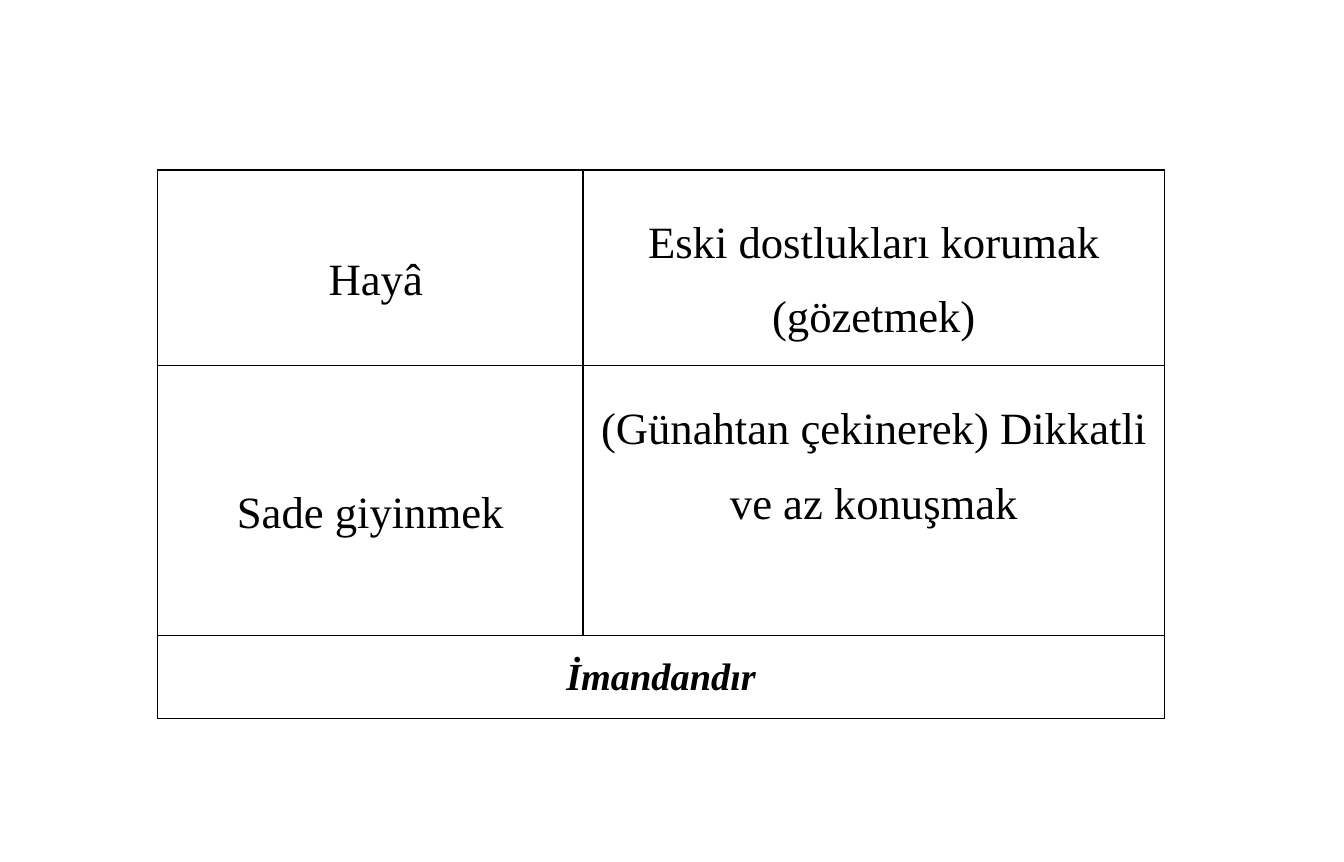
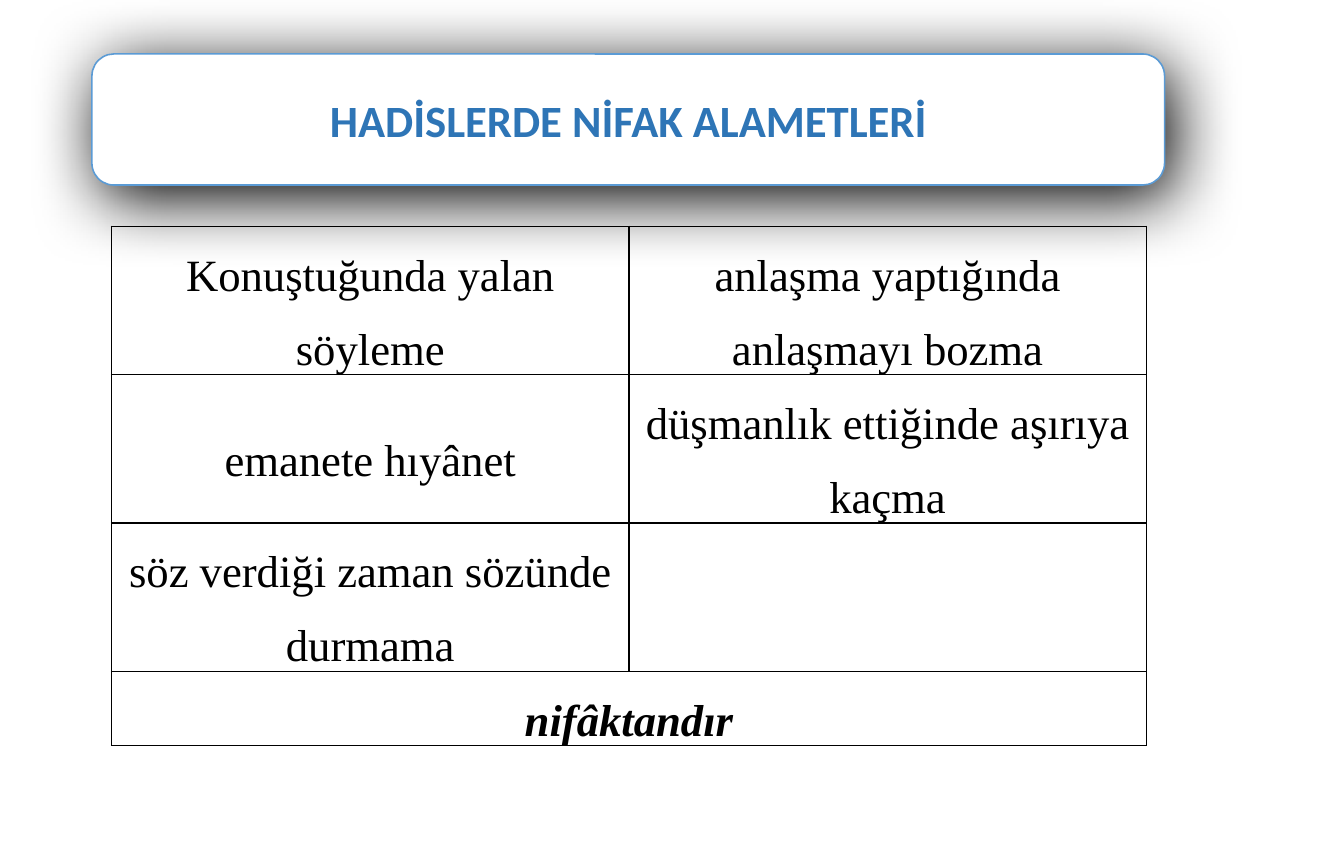
from lxml.etree import SubElement
from pptx import Presentation
from pptx.dml.color import RGBColor
from pptx.enum.shapes import MSO_SHAPE
from pptx.enum.text import MSO_ANCHOR, PP_ALIGN
from pptx.oxml.ns import qn
from pptx.util import Inches, Pt


def rgb(value):
    return RGBColor.from_string(value)


def apply(target, values):
    for name, value in values.items():
        setattr(target, name, value)


def add_color(parent, value):
    fill = SubElement(parent, qn("a:solidFill"))
    SubElement(fill, qn("a:srgbClr"), val=value)


class Deck:
    INK, PAPER, OUTLINE, TITLE = "000000", "FFFFFF", "5B9BD5", "2E75B6"
    BODY = dict(name="Times New Roman", size=Pt(28))
    HEADING = dict(name="Calibri", size=Pt(28), bold=True)
    PARAGRAPH = dict(alignment=PP_ALIGN.CENTER, line_spacing=1.5, space_after=Pt(6))
    CELL = dict(margin_left=Inches(0.07), margin_right=Inches(0.07),
                margin_top=0, margin_bottom=0)

    def __init__(self):
        self.prs = Presentation()
        self.prs.slide_width = Inches(11.69)
        self.prs.slide_height = Inches(7.5)

    def slide(self):
        self.s = self.prs.slides.add_slide(self.prs.slide_layouts[6])

    def run(self, p, text, font, color):
        r = p.add_run()
        r.text = text
        apply(r.font, font)
        r.font.color.rgb = rgb(color)

    def shadow(self, sp):
        sp.shadow.inherit = False
        effects = sp._element.spPr.find(qn("a:effectLst"))
        outer = SubElement(effects, qn("a:outerShdw"), blurRad=str(Pt(43)),
                           dist=str(Pt(9)), dir=str(60 * 60000),
                           algn="ctr", rotWithShape="0")
        color = SubElement(outer, qn("a:srgbClr"), val=self.INK)
        SubElement(color, qn("a:alpha"), val="99000")

    def banner(self, text, x, y, w, h):
        sp = self.s.shapes.add_shape(MSO_SHAPE.ROUNDED_RECTANGLE,
                                     *map(Inches, (x, y, w, h)))
        sp.fill.solid()
        sp.fill.fore_color.rgb = rgb(self.PAPER)
        sp.line.color.rgb = rgb(self.OUTLINE)
        sp.line.width = Pt(1)
        self.shadow(sp)
        tf = sp.text_frame
        apply(tf, dict(word_wrap=True, vertical_anchor=MSO_ANCHOR.MIDDLE))
        p = tf.paragraphs[0]
        p.alignment = PP_ALIGN.CENTER
        self.run(p, text, self.HEADING, self.TITLE)

    def borders(self, cell):
        tcPr = cell._tc.get_or_add_tcPr()
        for side in ("lnL", "lnR", "lnT", "lnB"):
            add_color(SubElement(tcPr, qn(f"a:{side}"), w=str(Pt(1))), self.INK)
        cell.fill.background()

    def cell_text(self, cell, text, **extra):
        apply(cell, self.CELL)
        p = cell.text_frame.paragraphs[0]
        apply(p, self.PARAGRAPH)
        self.run(p, text, {**self.BODY, **extra}, self.INK)

    def table(self, x, y, cols, rows, texts, verdict, verdict_size):
        """Draw a grid of texts closed by one merged verdict row."""
        size = (x, y, sum(cols), sum(rows))
        table = self.s.shapes.add_table(len(rows), len(cols), *map(Inches, size)).table
        apply(table, dict(first_row=False, horz_banding=False))
        for col, width in zip(table.columns, cols):
            col.width = Inches(width)
        for row, height in zip(table.rows, rows):
            row.height = Inches(height)
        for cell in table.iter_cells():
            self.borders(cell)
        for i, line in enumerate(texts):
            for j, text in enumerate(line):
                if text:
                    cell = table.cell(i, j)
                    self.cell_text(cell, text)
                    cell.vertical_anchor = MSO_ANCHOR.MIDDLE
        last = len(rows) - 1
        table.cell(last, 0).merge(table.cell(last, len(cols) - 1))
        self.cell_text(table.cell(last, 0), verdict, size=Pt(verdict_size),
                       bold=True, italic=True)
        return table


def main():
    deck = Deck()

    # Signs of faith
    deck.slide()
    faith = deck.table(1.37, 1.48, (3.7, 5.06), (1.7, 2.35, 0.72), [
        (" Hayâ", "Eski dostlukları korumak (gözetmek)"),
        ("Sade giyinmek", "(Günahtan çekinerek) Dikkatli ve az konuşmak"),
    ], "İmandandır", 24)
    # This text sits above the middle of its cell
    faith.cell(1, 1).margin_bottom = Inches(0.8)

    # Signs of hypocrisy
    deck.slide()
    deck.banner("HADİSLERDE NİFAK ALAMETLERİ", 0.8, 0.47, 9.33, 1.14)
    deck.table(0.97, 1.97, (4.5, 4.5), (1.11, 0.55, 1.11, 0.55), [
        ("Konuştuğunda yalan söyleme", "anlaşma yaptığında anlaşmayı bozma"),
        ("emanete hıyânet", "düşmanlık ettiğinde aşırıya kaçma"),
        ("söz verdiği zaman sözünde durmama", ""),
    ], "nifâktandır", 28)

    deck.prs.save("out.pptx")


if __name__ == "__main__":
    main()
